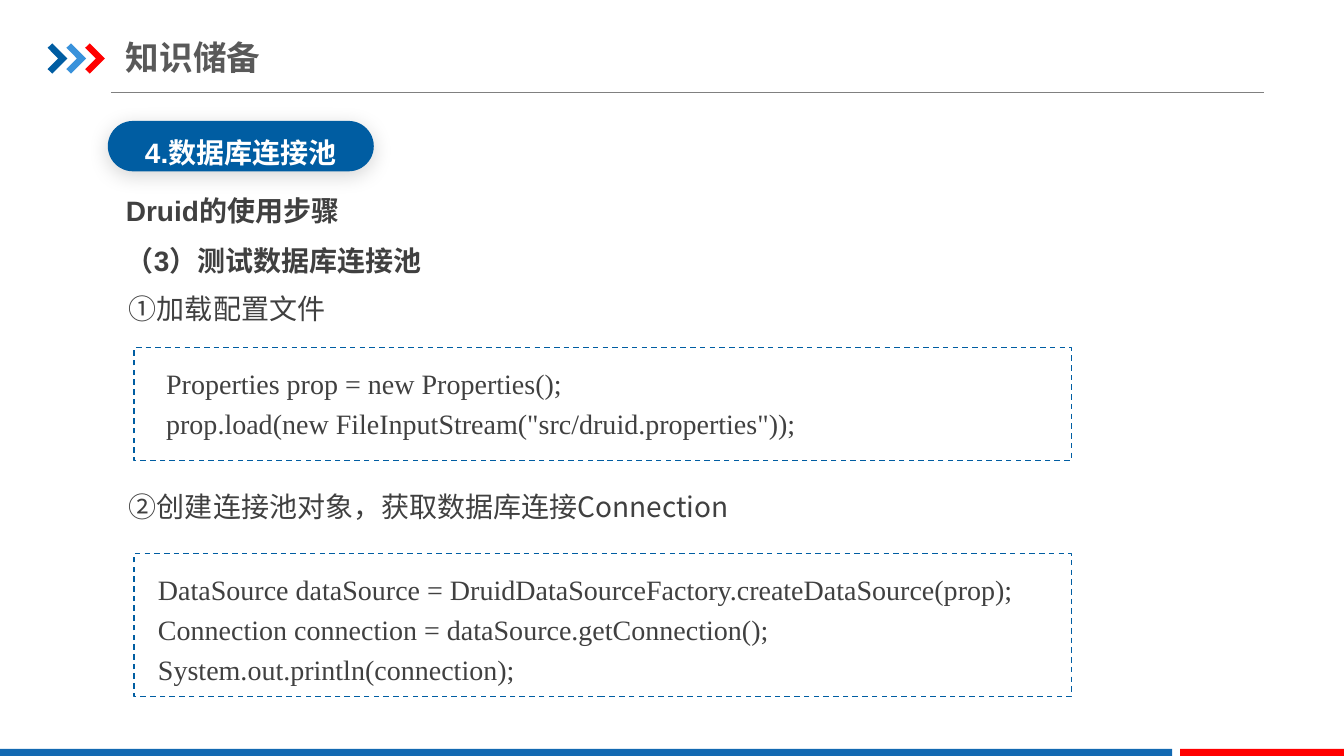
from dataclasses import dataclass
from lxml import etree
from pptx import Presentation
from pptx import util as u
from pptx.dml.color import RGBColor
from pptx.enum import dml, shapes, text
from pptx.oxml.ns import qn

Pt = u.Pt


@dataclass(frozen=True)
class Theme:
    blue: str = "005DA2"
    sky: str = "3992DB"
    red: str = "FF0000"
    base: str = "1369B2"
    rule: str = "808080"
    head: str = "595959"
    ink: str = "404040"
    white: str = "FFFFFF"
    sans: str = "Arial"
    han: str = "Noto Sans CJK SC"
    code: str = "Times New Roman"
    title: int = 24
    body: int = 20


T = Theme()


def rgb(hue):
    return RGBColor.from_string(hue)


def paint(shape, hue):
    shape.shadow.inherit = False
    shape.fill.solid()
    shape.fill.fore_color.rgb = rgb(hue)
    shape.line.fill.background()


def block(slide, kind, box, hue):
    shape = slide.shapes.add_shape(kind, *map(Pt, box))
    paint(shape, hue)
    return shape


def rule(slide, left, right, top):
    line = slide.shapes.add_connector(
        shapes.MSO_CONNECTOR.STRAIGHT, Pt(left), Pt(top), Pt(right), Pt(top))
    line.line.color.rgb = rgb(T.rule)
    line.line.width = Pt(0.5)
    etree.SubElement(line._element.spPr, qn("a:effectLst"))


def arrow(slide, left, top, hue):
    edge = [(0, 3.2), (3.4, 0), (14.2, 10.8), (3.4, 21.6), (0, 18.4), (7.6, 10.8)]
    dots = [(Pt(left + x), Pt(top + y)) for x, y in edge]
    form = slide.shapes.build_freeform(*dots[0])
    form.add_line_segments(dots[1:], close=True)
    paint(form.convert_to_shape(), hue)


def frame(slide, box):
    shape = slide.shapes.add_shape(shapes.MSO_SHAPE.RECTANGLE, *map(Pt, box))
    shape.shadow.inherit = False
    shape.fill.background()
    shape.line.color.rgb = rgb(T.blue)
    shape.line.width = Pt(1)
    shape.line.dash_style = dml.MSO_LINE.DASH


def glow(shape):
    list_ = shape._element.spPr.find(qn("a:effectLst"))
    shade = etree.SubElement(
        list_, qn("a:outerShdw"), blurRad=str(Pt(15)), dist=str(Pt(3)),
        dir="5400000", algn="t", rotWithShape="0")
    tone = etree.SubElement(shade, qn("a:srgbClr"), val="000000")
    etree.SubElement(tone, qn("a:alpha"), val="17000")


def write(slide, box, lines, font, hue=T.ink, size=T.body, bold=False,
          space=1.5, align=text.PP_ALIGN.LEFT):
    area = slide.shapes.add_textbox(*map(Pt, box)).text_frame
    area.word_wrap = True
    for i, line in enumerate(lines):
        para = area.paragraphs[0] if i == 0 else area.add_paragraph()
        para.line_spacing = space
        para.alignment = align
        run = para.add_run()
        run.text = line
        run.font.name = font
        run.font.size = Pt(size)
        run.font.bold = bold
        run.font.color.rgb = rgb(hue)
        etree.SubElement(run._r.get_or_add_rPr(), qn("a:ea"), typeface=T.han)
    return area


def header(slide):
    rule(slide, 79.2, 902.9, 65.7)
    for i, hue in enumerate((T.blue, T.sky, T.red)):
        arrow(slide, 34 + 13.4 * i, 31, hue)
    area = write(slide, (90, 20.9, 306.7, 39.6), ["知识储备"], T.han,
                 T.head, T.title, True, 1.0)
    area.margin_left = area.margin_right = 0
    area.margin_top = area.margin_bottom = Pt(5)
    area.vertical_anchor = text.MSO_ANCHOR.MIDDLE


def footer(slide):
    for left, width, hue in ((0, 837.2, T.base), (843, 117, T.red)):
        block(slide, shapes.MSO_SHAPE.RECTANGLE, (left, 535, width, 5), hue)


def badge(slide, label):
    pill = block(slide, shapes.MSO_SHAPE.ROUNDED_RECTANGLE,
                 (77, 86.4, 190, 36), T.blue)
    pill.adjustments[0] = 0.5
    glow(pill)
    write(slide, (69.8, 85, 204.5, 39.6), [label], T.sans, T.white,
          bold=True, space=1.35, align=text.PP_ALIGN.CENTER)


def main():
    deck = Presentation()
    deck.slide_width, deck.slide_height = Pt(960), Pt(540)
    slide = deck.slides.add_slide(deck.slide_layouts[6])
    header(slide)
    footer(slide)
    badge(slide, "4.数据库连接池")

    for top, line in ((122.4, "Druid的使用步骤"), (158.2, "（3）测试数据库连接池")):
        write(slide, (82.8, top, 360, 43.2), [line], T.sans, bold=True)
    for top, line in ((193, "①加载配置文件"),
                      (334.2, "②创建连接池对象，获取数据库连接Connection")):
        write(slide, (85, top, 545, 43.2), [line], T.han)

    load = ["Properties prop = new Properties();",
            'prop.load(new FileInputStream("src/druid.properties"));']
    link = ["DataSource dataSource = DruidDataSourceFactory.createDataSource(prop);",
            "Connection connection = dataSource.getConnection();",
            "System.out.println(connection);"]
    for left, top, tall, lines in ((111.6, 248.4, 80.6, load),
                                   (105.8, 395.3, 102.2, link)):
        frame(slide, (95.8, top, 669.6, tall))
        write(slide, (left, top + 5, 736, tall - 8), lines, T.code, space=1.2)

    deck.save("out.pptx")


if __name__ == "__main__":
    main()
